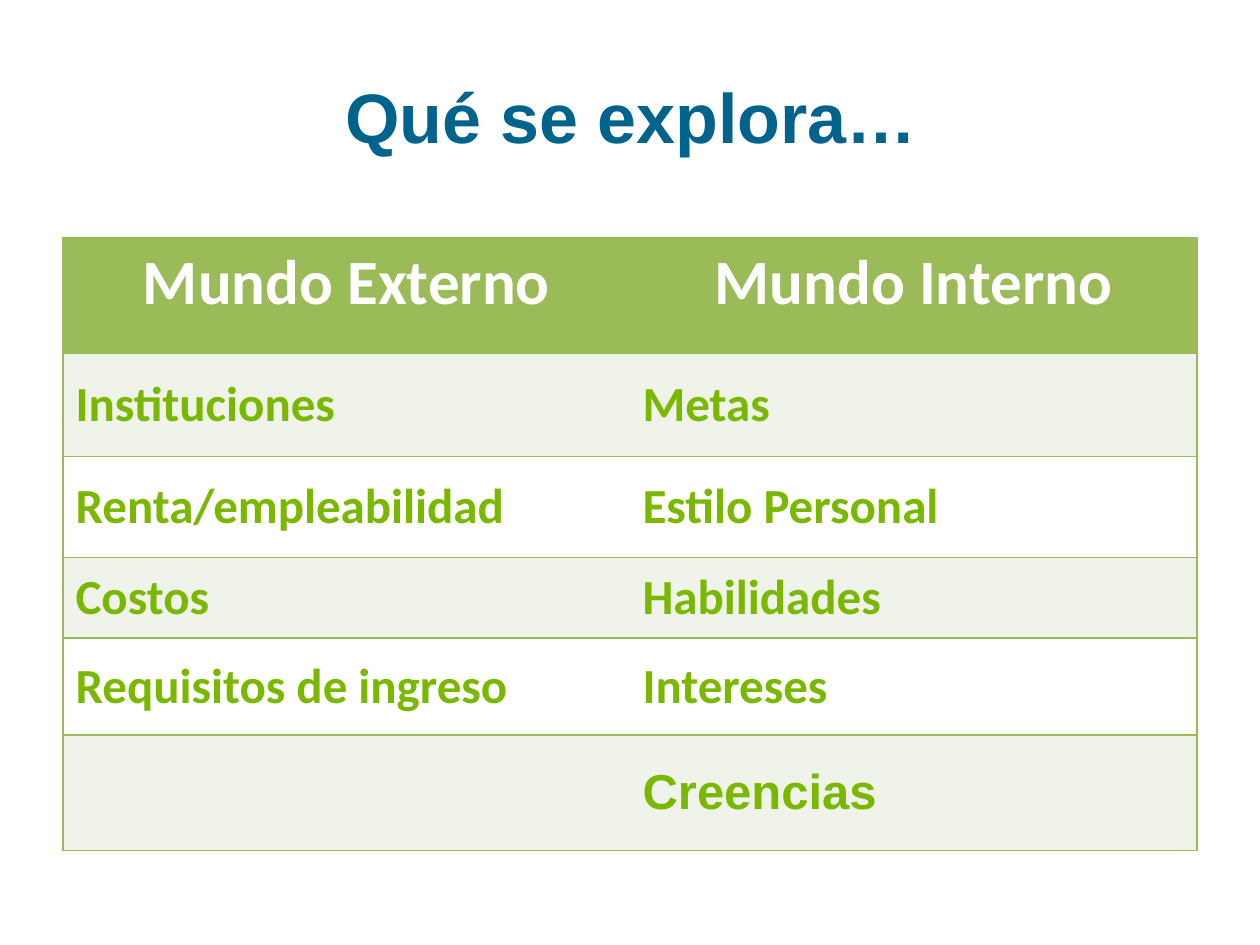
from dataclasses import dataclass

from lxml.etree import SubElement
from pptx import Presentation
from pptx.dml.color import RGBColor
from pptx.enum.text import MSO_ANCHOR, PP_ALIGN
from pptx.oxml.ns import qn
from pptx.util import Pt


@dataclass(frozen=True)
class Theme:
    title_color: str = "00638B"
    header_fill: str = "9BBB59"
    header_text: str = "FFFFFF"
    body_text: str = "7AB800"
    bands: tuple = ("EFF3EA", "FFFFFF")
    title_size: int = 40
    header_size: int = 36
    body_size: int = 28
    title_font: str = "Arial"
    table_font: str = "Calibri"


THEME = Theme()
HEADERS = ("Mundo Externo", "Mundo Interno")
TOPICS = (
    ("Instituciones", "Metas"),
    ("Renta/empleabilidad", "Estilo Personal"),
    ("Costos", "Habilidades"),
    ("Requisitos de ingreso", "Intereses"),
    ("", "Creencias"),
)
ROW_HEIGHTS = (66, 59, 57.5, 46, 55.5, 66)


def write(frame, text, font_name, size, color, align):
    frame.text = text
    paragraph = frame.paragraphs[0]
    paragraph.alignment = align
    for run in paragraph.runs:
        run.font.name = font_name
        run.font.size = Pt(size)
        run.font.bold = True
        run.font.color.rgb = RGBColor.from_string(color)


def set_borders(cell, visible):
    """Draw the named sides (L, R, T, B) and clear the others."""
    properties = cell._tc.get_or_add_tcPr()
    for side in "LRTB":
        line = SubElement(properties, qn(f"a:ln{side}"), w=str(Pt(1)))
        if side in visible:
            fill = SubElement(line, qn("a:solidFill"))
            SubElement(fill, qn("a:srgbClr"), val=THEME.header_fill)
        else:
            SubElement(line, qn("a:noFill"))


def add_title(slide, left, top, width, height):
    frame = slide.shapes.add_textbox(Pt(left), Pt(top), Pt(width), Pt(height)).text_frame
    frame.word_wrap = True
    frame.vertical_anchor = MSO_ANCHOR.MIDDLE
    write(frame, "Qué se explora…", THEME.title_font, THEME.title_size,
          THEME.title_color, PP_ALIGN.CENTER)


def add_worlds_table(slide, left, top, width, height):
    rows = (HEADERS, *TOPICS)
    table = slide.shapes.add_table(len(rows), len(HEADERS), Pt(left), Pt(top),
                                   Pt(width), Pt(height)).table
    for column in table.columns:
        column.width = Pt(width / len(HEADERS))
    for r, (labels, row_height) in enumerate(zip(rows, ROW_HEIGHTS)):
        table.rows[r].height = Pt(row_height)
        is_header = r == 0
        for c, label in enumerate(labels):
            cell = table.cell(r, c)
            set_borders(cell, "LTB" if c == 0 else "RTB")
            cell.fill.solid()
            band = THEME.header_fill if is_header else THEME.bands[(r - 1) % 2]
            cell.fill.fore_color.rgb = RGBColor.from_string(band)
            if is_header:
                write(cell.text_frame, label, THEME.table_font, THEME.header_size,
                      THEME.header_text, PP_ALIGN.CENTER)
            else:
                cell.vertical_anchor = MSO_ANCHOR.MIDDLE
                font_name = THEME.title_font if label == "Creencias" else THEME.table_font
                write(cell.text_frame, label, font_name, THEME.body_size,
                      THEME.body_text, PP_ALIGN.LEFT)


def main():
    presentation = Presentation()
    presentation.slide_width, presentation.slide_height = Pt(720), Pt(540)
    slide = presentation.slides.add_slide(presentation.slide_layouts[6])
    add_title(slide, 36.5, 21, 648, 90)
    add_worlds_table(slide, 36, 136, 648, sum(ROW_HEIGHTS))
    presentation.save("out.pptx")


if __name__ == "__main__":
    main()
